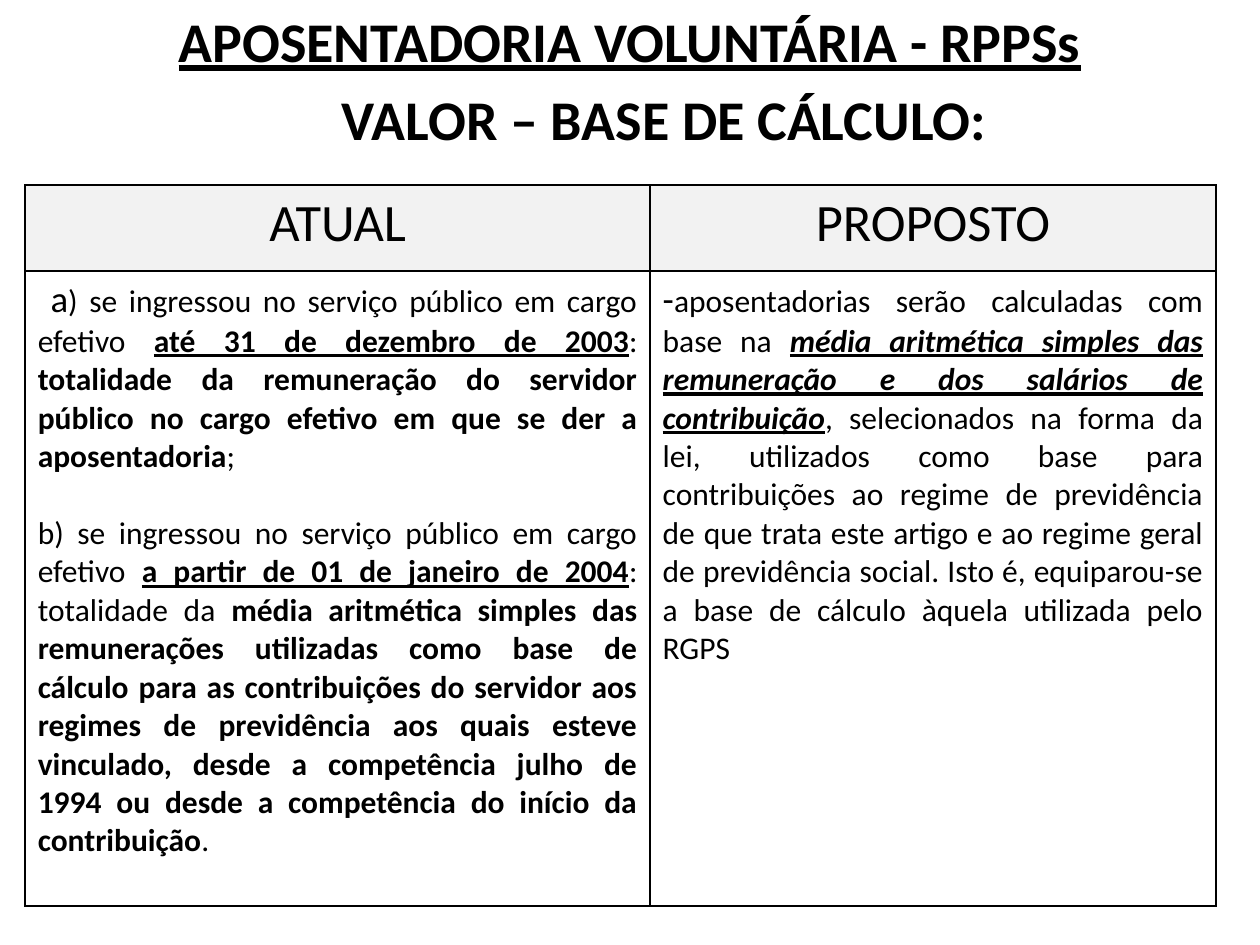
import pptx
import pptx.util
import pptx.dml.color
import pptx.enum.text
import pptx.oxml
import pptx.oxml.ns
from lxml import etree

Inches, Pt = pptx.util.Inches, pptx.util.Pt
ALIGN = pptx.enum.text.PP_ALIGN
qn = pptx.oxml.ns.qn

FONT = "Calibri"
COLORS = {"text": "000000", "border": "000000", "header": "F2F2F2", "cell": "FFFFFF"}

# Each run is (text, size, style), with b, i, u for bold, italic, underline
CURRENT_RULES = [
    [
        (" a", 21, ""),
        (") se ingressou no serviço público em cargo efetivo ", 18, ""),
        ("até 31 de dezembro de 2003", 18, "bu"),
        (": ", 18, ""),
        ("totalidade da remuneração do servidor público no cargo efetivo em que "
         "se der a aposentadoria", 18, "b"),
        (";", 18, ""),
    ],
    [
        ("b) se ingressou no serviço público em cargo efetivo ", 18, ""),
        ("a partir de 01 de janeiro de 2004", 18, "bu"),
        (": totalidade da ", 18, ""),
        ("média aritmética simples das remunerações utilizadas como base de cálculo "
         "para as contribuições do servidor aos regimes de previdência aos quais "
         "esteve vinculado, desde a competência julho de 1994 ou desde a competência "
         "do início da contribuição", 18, "b"),
        (".", 18, ""),
    ],
]
PROPOSED_RULES = [
    [
        ("-", 21, ""),
        ("aposentadorias serão calculadas com base na ", 18, ""),
        ("média aritmética simples das remuneração e dos salários de contribuição",
         18, "biu"),
        (", selecionados na forma da lei, utilizados como base para contribuições ao "
         "regime de previdência de que trata este artigo e ao regime geral de "
         "previdência social. Isto é, equiparou-se a base de cálculo àquela utilizada "
         "pelo RGPS", 18, ""),
    ],
]


def rgb(name):
    return pptx.dml.color.RGBColor.from_string(COLORS[name])


def add_run(p, text, size, style=""):
    r = p.add_run()
    r.text = text
    r.font.name = FONT
    r.font.size = Pt(size)
    r.font.color.rgb = rgb("text")
    r.font.bold = "b" in style
    r.font.italic = "i" in style
    r.font.underline = "u" in style


def fill_text(tf, paragraphs, align, gap=0):
    for n, runs in enumerate(paragraphs):
        p = tf.add_paragraph() if n else tf.paragraphs[0]
        p.alignment = align
        if n and gap:
            p.space_before = Pt(gap)
        for run in runs:
            add_run(p, *run)


def set_borders(cell):
    tcPr = cell._tc.get_or_add_tcPr()
    for n, side in enumerate(("lnL", "lnR", "lnT", "lnB")):
        ln = etree.Element(qn("a:" + side), w=str(Pt(1)))
        fill = etree.SubElement(ln, qn("a:solidFill"))
        etree.SubElement(fill, qn("a:srgbClr"), val=COLORS["border"])
        tcPr.insert(n, ln)


def build_heading(s, left, top, width, height):
    body = s.placeholders[1]
    body.left, body.top, body.width, body.height = left, top, width, height
    tf = body.text_frame
    fill_text(tf, [[("APOSENTADORIA VOLUNTÁRIA - RPPSs", 32, "bu")],
                   [("VALOR – BASE DE CÁLCULO:", 32, "b")]], ALIGN.LEFT)
    tf.paragraphs[0].alignment = ALIGN.CENTER
    # No bullets; the second line is indented
    for p, margin in zip(tf.paragraphs, (0, 2.61)):
        pPr = p._p.get_or_add_pPr()
        pPr.set("marL", str(Inches(margin)))
        pPr.set("indent", "0")
        etree.SubElement(pPr, qn("a:buNone"))


def build_comparison(s, left, top, col_widths, row_heights):
    table = s.shapes.add_table(2, 2, left, top, sum(col_widths), sum(row_heights)).table
    table.first_row = table.horz_banding = False
    for col, width in zip(table.columns, col_widths):
        col.width = width
    for row, height in zip(table.rows, row_heights):
        row.height = height

    columns = (("ATUAL", CURRENT_RULES), ("PROPOSTO", PROPOSED_RULES))
    for c, (heading, rules) in enumerate(columns):
        fill_text(table.cell(0, c).text_frame, [[(heading, 30)]], ALIGN.CENTER)
        fill_text(table.cell(1, c).text_frame, rules, ALIGN.JUSTIFY, gap=22)
        for r, color in enumerate(("header", "cell")):
            cell = table.cell(r, c)
            cell.fill.solid()
            cell.fill.fore_color.rgb = rgb(color)
            set_borders(cell)


def main():
    prs = pptx.Presentation()
    prs.slide_width, prs.slide_height = Inches(10), Inches(7.5)
    s = prs.slides.add_slide(prs.slide_layouts[1])
    title = s.shapes.title
    title.element.getparent().remove(title.element)

    build_heading(s, Inches(0), Inches(0), Inches(10), Inches(7.37))
    build_comparison(s, Inches(0.2), Inches(1.47),
                     (Inches(4.96), Inches(4.49)), (Inches(0.68), Inches(5.04)))
    prs.save("out.pptx")


if __name__ == "__main__":
    main()
